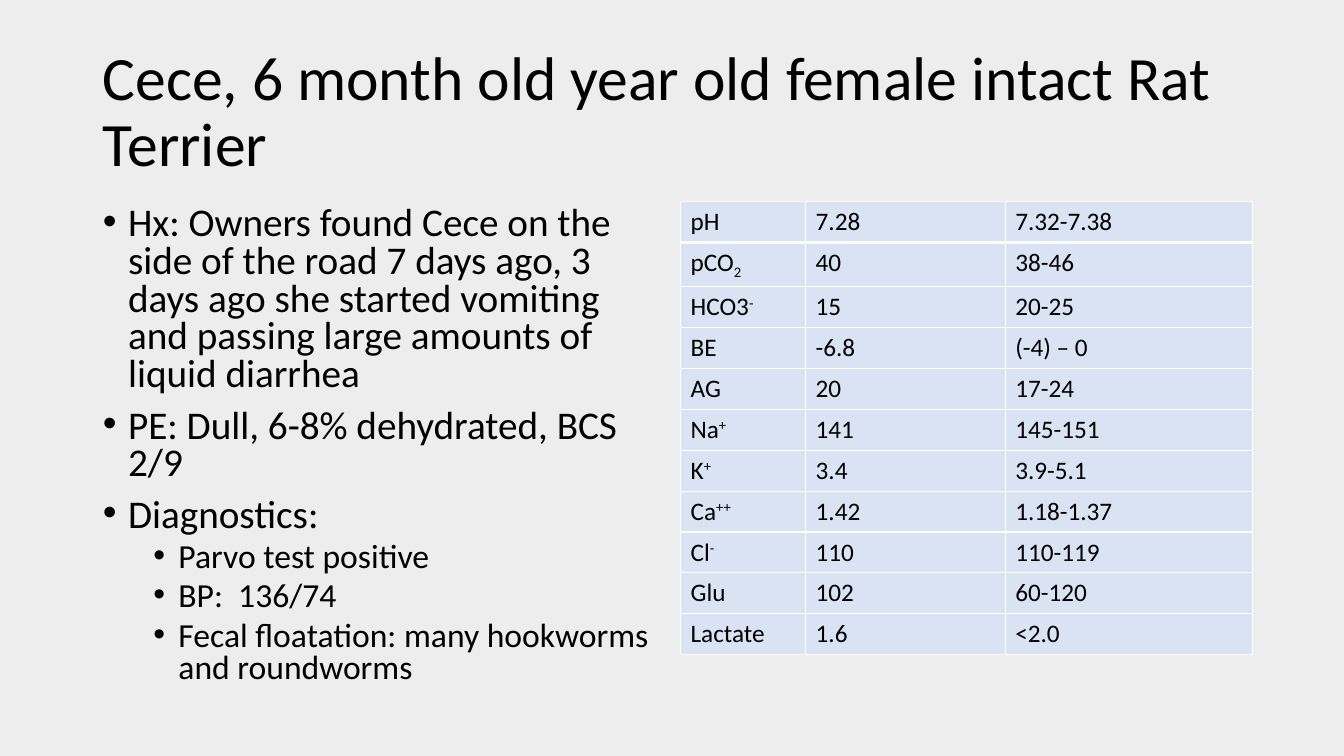
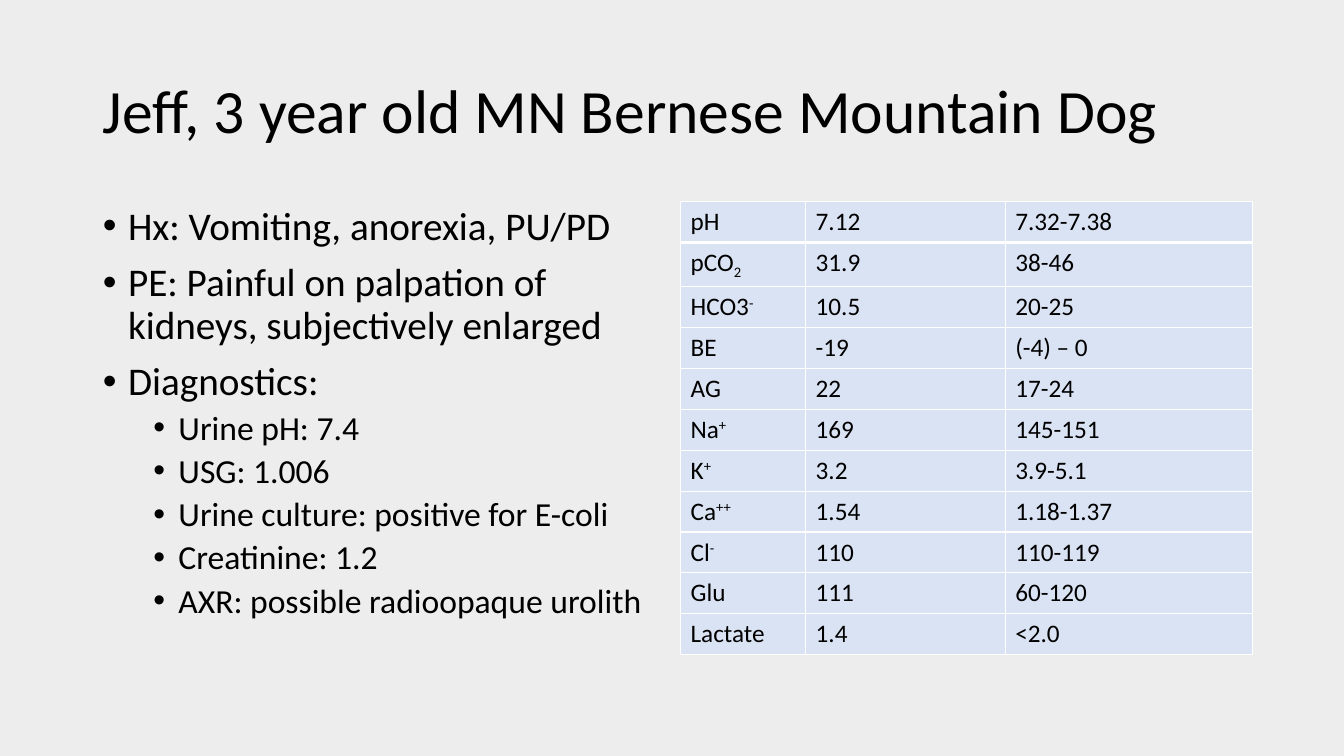
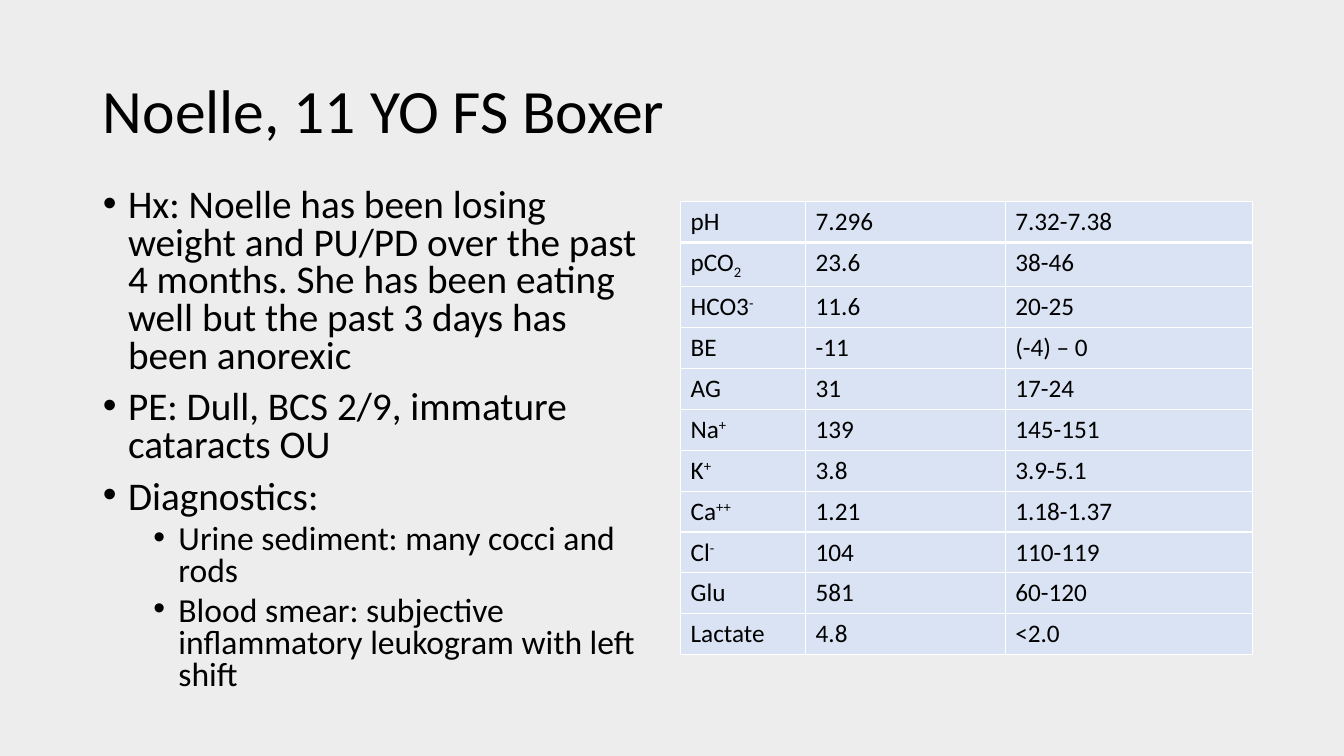
from lxml.etree import SubElement
from pptx import Presentation
from pptx.dml.color import RGBColor
from pptx.enum.text import MSO_ANCHOR, MSO_AUTO_SIZE, PP_ALIGN
from pptx.oxml import parse_xml
from pptx.oxml.ns import nsdecls, qn
from pptx.util import Inches, Pt

BACKGROUND = RGBColor(0xED, 0xED, 0xED)
TEXT = RGBColor(0x00, 0x00, 0x00)
CELL_FILL = RGBColor(0xDA, 0xE3, 0xF3)
BORDER = RGBColor(0xFF, 0xFF, 0xFF)
FONT = "Calibri"

LEFT = 0.92
COLUMN_WIDTH = 5.67
TABLE_LEFT = 6.75
TABLE_TOP = 2
TABLE_HEIGHT = 4.46
TABLE_COLUMNS = (1.24, 1.98, 2.45)
SUBSCRIPT, SUPERSCRIPT = -25, 30

ANALYTES = [
    ("pH", "", 0, "7.32-7.38"),
    ("pCO", "2", SUBSCRIPT, "38-46"),
    ("HCO3", "-", SUPERSCRIPT, "20-25"),
    ("BE", "", 0, "(-4) – 0"),
    ("AG", "", 0, "17-24"),
    ("Na", "+", SUPERSCRIPT, "145-151"),
    ("K", "+", SUPERSCRIPT, "3.9-5.1"),
    ("Ca", "++", SUPERSCRIPT, "1.18-1.37"),
    ("Cl", "-", SUPERSCRIPT, "110-119"),
    ("Glu", "", 0, "60-120"),
    ("Lactate", "", 0, "<2.0"),
]

CASES = [
    {
        "title": "Cece, 6 month old year old female intact Rat Terrier",
        "top": 2, "height": 4.94, "line_spacing": 0.8,
        "findings": [
            "Hx: Owners found Cece on the side of the road 7 days ago, 3 days ago "
            "she started vomiting and passing large amounts of liquid diarrhea",
            "PE: Dull, 6-8% dehydrated, BCS 2/9",
            "Diagnostics:",
        ],
        "diagnostics": [
            "Parvo test positive",
            "BP:  136/74",
            "Fecal floatation: many hookworms and roundworms",
        ],
        "values": ["7.28", "40", "15", "-6.8", "20", "141", "3.4", "1.42", "110", "102", "1.6"],
    },
    {
        "title": "Jeff, 3 year old MN Bernese Mountain Dog",
        "top": 2, "height": 4.76, "line_spacing": 0.9,
        "findings": [
            "Hx: Vomiting, anorexia, PU/PD",
            "PE: Painful on palpation of kidneys, subjectively enlarged",
            "Diagnostics:",
        ],
        "diagnostics": [
            "Urine pH: 7.4",
            "USG: 1.006",
            "Urine culture: positive for E-coli",
            "Creatinine: 1.2",
            "AXR: possible radioopaque urolith",
        ],
        "values": ["7.12", "31.9", "10.5", "-19", "22", "169", "3.2", "1.54", "110", "111", "1.4"],
    },
    {
        "title": "Noelle, 11 YO FS Boxer",
        "top": 1.82, "height": 5.28, "line_spacing": 0.8,
        "findings": [
            "Hx: Noelle has been losing weight and PU/PD over the past 4 months. "
            "She has been eating well but the past 3 days has been anorexic",
            "PE: Dull, BCS 2/9, immature cataracts OU",
            "Diagnostics:",
        ],
        "diagnostics": [
            "Urine sediment: many cocci and rods",
            "Blood smear: subjective inflammatory leukogram with left shift",
        ],
        "values": ["7.296", "23.6", "11.6", "-11", "31", "139", "3.8", "1.21", "104", "581", "4.8"],
    },
]


def add_run(paragraph, text, size, baseline=0):
    """Add one formatted run, raised or lowered by a baseline percentage."""
    run = paragraph.add_run()
    run.text = text
    run.font.name = FONT
    run.font.size = Pt(size)
    run.font.color.rgb = TEXT
    if baseline:
        run.font._element.set("baseline", str(baseline * 1000))


def place(shape, left, top, width, height):
    """Move and size a placeholder, given inches."""
    shape.left, shape.top = Inches(left), Inches(top)
    shape.width, shape.height = Inches(width), Inches(height)


def fill_title(shape, text):
    """Write the slide title."""
    place(shape, LEFT, 0.4, 11.5, 1.45)
    frame = shape.text_frame
    frame.auto_size = MSO_AUTO_SIZE.NONE
    frame.vertical_anchor = MSO_ANCHOR.MIDDLE
    paragraph = frame.paragraphs[0]
    paragraph.alignment = PP_ALIGN.LEFT
    paragraph.line_spacing = 0.9
    add_run(paragraph, text, 44)


def format_bullet(paragraph, level, line_spacing):
    """Set the level, spacing, indent and bullet of a list paragraph."""
    paragraph.level = level
    paragraph.line_spacing = line_spacing
    paragraph.space_before = Pt(5 if level else 10)
    properties = paragraph._p.get_or_add_pPr()
    properties.set("marL", str(Inches(0.25 + 0.5 * level)))
    properties.set("indent", str(Inches(-0.25)))
    SubElement(properties, qn("a:buFont"), typeface="Arial")
    SubElement(properties, qn("a:buChar"), char="•")


def fill_list(shape, case):
    """Write the findings and, one level down, the diagnostics."""
    place(shape, LEFT, case["top"], COLUMN_WIDTH, case["height"])
    frame = shape.text_frame
    frame.auto_size = MSO_AUTO_SIZE.NONE
    items = [(0, text) for text in case["findings"]]
    items += [(1, text) for text in case["diagnostics"]]
    for index, (level, text) in enumerate(items):
        paragraph = frame.add_paragraph() if index else frame.paragraphs[0]
        format_bullet(paragraph, level, case["line_spacing"])
        add_run(paragraph, text, 24 if level else 28)


def set_borders(cell, top, bottom):
    """Draw the four cell borders, with the top and bottom widths in points."""
    properties = cell._tc.get_or_add_tcPr()
    widths = {"lnL": 1, "lnR": 1, "lnT": top, "lnB": bottom}
    for index, (tag, width) in enumerate(widths.items()):
        properties.insert(index, parse_xml(
            f'<a:{tag} {nsdecls("a")} w="{Pt(width)}"><a:solidFill>'
            f'<a:srgbClr val="{BORDER}"/></a:solidFill></a:{tag}>'))


def add_results_table(slide, values):
    """Add the table of analytes, measured values and reference ranges."""
    table = slide.shapes.add_table(
        len(ANALYTES), len(TABLE_COLUMNS), Inches(TABLE_LEFT), Inches(TABLE_TOP),
        Inches(sum(TABLE_COLUMNS)), Inches(TABLE_HEIGHT)).table
    table.first_row = False
    table.horz_banding = False
    for column, width in zip(table.columns, TABLE_COLUMNS):
        column.width = Inches(width)
    for index, (analyte, value) in enumerate(zip(ANALYTES, values)):
        name, script, baseline, reference = analyte
        cells = table.rows[index].cells
        for cell, text in zip(cells, (name, value, reference)):
            cell.fill.solid()
            cell.fill.fore_color.rgb = CELL_FILL
            set_borders(cell, 3 if index == 1 else 1, 3 if index == 0 else 1)
            add_run(cell.text_frame.paragraphs[0], text, 18)
        if script:
            add_run(cells[0].text_frame.paragraphs[0], script, 18, baseline)


def add_case_slide(presentation, case):
    """Add one patient slide."""
    slide = presentation.slides.add_slide(presentation.slide_layouts[1])
    fill_title(slide.shapes.title, case["title"])
    fill_list(slide.placeholders[1], case)
    add_results_table(slide, case["values"])


def main():
    """Build and save the presentation."""
    presentation = Presentation()
    presentation.slide_width = Inches(13.33)
    presentation.slide_height = Inches(7.5)
    background = presentation.slide_master.background.fill
    background.solid()
    background.fore_color.rgb = BACKGROUND
    for case in CASES:
        add_case_slide(presentation, case)
    presentation.save("out.pptx")


if __name__ == "__main__":
    main()
